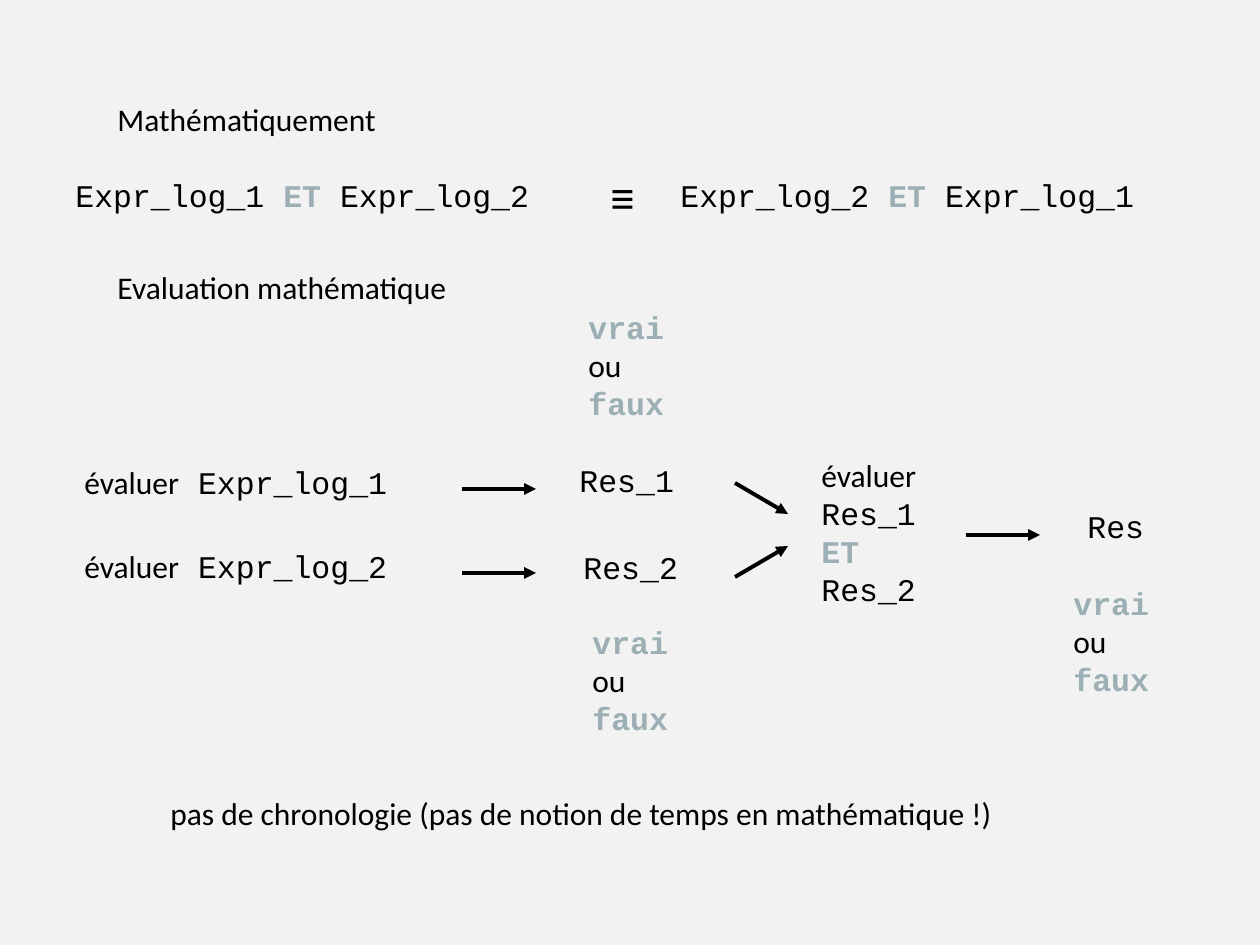
import lxml.etree
import pptx
import pptx.dml.color
import pptx.enum.shapes
import pptx.enum.text
import pptx.oxml.ns
import pptx.util

COLORS = {"background": "F2F2F2", "ink": "000000", "keyword": "9BAFB5"}
STYLES = {  # font, size, colour, bold
    "prose": ("Calibri", 18, "ink", False),
    "code": ("Courier New", 18, "ink", False),
    "keyword": ("Courier New", 18, "keyword", True),
    "symbol": ("Calibri", 28, "ink", False),
}


def conjunction(first, second):
    return [[(f"{first} ", "code"), ("ET", "keyword"), (f" {second}", "code")]]


def evaluation(expression):
    return [[("évaluer", "prose"), (f" {expression}", "code")]]


def single(text, style):
    return [[(text, style)]]


TRUTH_VALUES = [[("vrai", "keyword")], [("ou", "prose")], [("faux", "keyword")]]
COMBINATION = [[("évaluer", "prose")], [("Res_1", "code")],
               [("ET", "keyword")], [("Res_2", "code")]]

# Text boxes: left, top, width, height in px, then paragraphs of runs
TEXTS = [
    # Commutativity
    (105, 94, 306, 54, single("Mathématiquement", "prose")),
    (63, 170, 529, 54, conjunction("Expr_log_1", "Expr_log_2")),
    (598, 160, 52, 72, single("≡", "symbol")),
    (668, 170, 529, 54, conjunction("Expr_log_2", "Expr_log_1")),
    # Evaluation diagram
    (105, 262, 392, 54, single("Evaluation mathématique", "prose")),
    (72, 457, 359, 54, evaluation("Expr_log_1")),
    (72, 541, 359, 54, evaluation("Expr_log_2")),
    (567, 455, 130, 54, single("Res_1", "code")),
    (571, 542, 130, 54, single("Res_2", "code")),
    (809, 450, 130, 180, COMBINATION),
    (1075, 501, 88, 54, single("Res", "code")),
    # Possible values beside each result
    (576, 302, 110, 139, TRUTH_VALUES),
    (580, 617, 110, 139, TRUTH_VALUES),
    (1061, 578, 110, 139, TRUTH_VALUES),
    # Conclusion
    (158, 788, 910, 54,
     single("pas de chronologie (pas de notion de temps en mathématique !)", "prose")),
]

# Arrows: start x, start y, tip x, tip y in px
ARROWS = [
    (462, 489, 536, 489),
    (462, 573, 536, 573),
    (735, 483, 788, 514),
    (735, 577, 788, 546),
    (966, 535, 1040, 535),
]


def px(value):
    return round(value * 914400 / 126)


def color(name):
    return pptx.dml.color.RGBColor.from_string(COLORS[name])


def add_text(page, left, top, width, height, paragraphs):
    box = page.shapes.add_textbox(px(left), px(top), px(width), px(height))
    frame = box.text_frame
    frame.word_wrap = False
    frame.auto_size = pptx.enum.text.MSO_AUTO_SIZE.SHAPE_TO_FIT_TEXT
    for index, runs in enumerate(paragraphs):
        para = frame.add_paragraph() if index else frame.paragraphs[0]
        for text, style in runs:
            font, size, ink, bold = STYLES[style]
            span = para.add_run()
            span.text = text
            span.font.name = font
            span.font.size = pptx.util.Pt(size)
            span.font.bold = bold
            span.font.color.rgb = color(ink)


def add_arrow(page, *ends):
    arrow = page.shapes.add_connector(
        pptx.enum.shapes.MSO_CONNECTOR.STRAIGHT, *map(px, ends))
    arrow.line.color.rgb = color("ink")
    arrow.line.width = pptx.util.Pt(2.25)
    qn = pptx.oxml.ns.qn
    properties = arrow.line._get_or_add_ln()
    lxml.etree.SubElement(properties, qn("a:tailEnd"), type="triangle")
    lxml.etree.SubElement(properties.getparent(), qn("a:effectLst"))


def main():
    deck = pptx.Presentation()
    deck.slide_width, deck.slide_height = px(1260), px(945)
    page = deck.slides.add_slide(deck.slide_layouts[6])
    page.background.fill.solid()
    page.background.fill.fore_color.rgb = color("background")
    for text in TEXTS:
        add_text(page, *text)
    for arrow in ARROWS:
        add_arrow(page, *arrow)
    deck.save("out.pptx")


if __name__ == "__main__":
    main()
